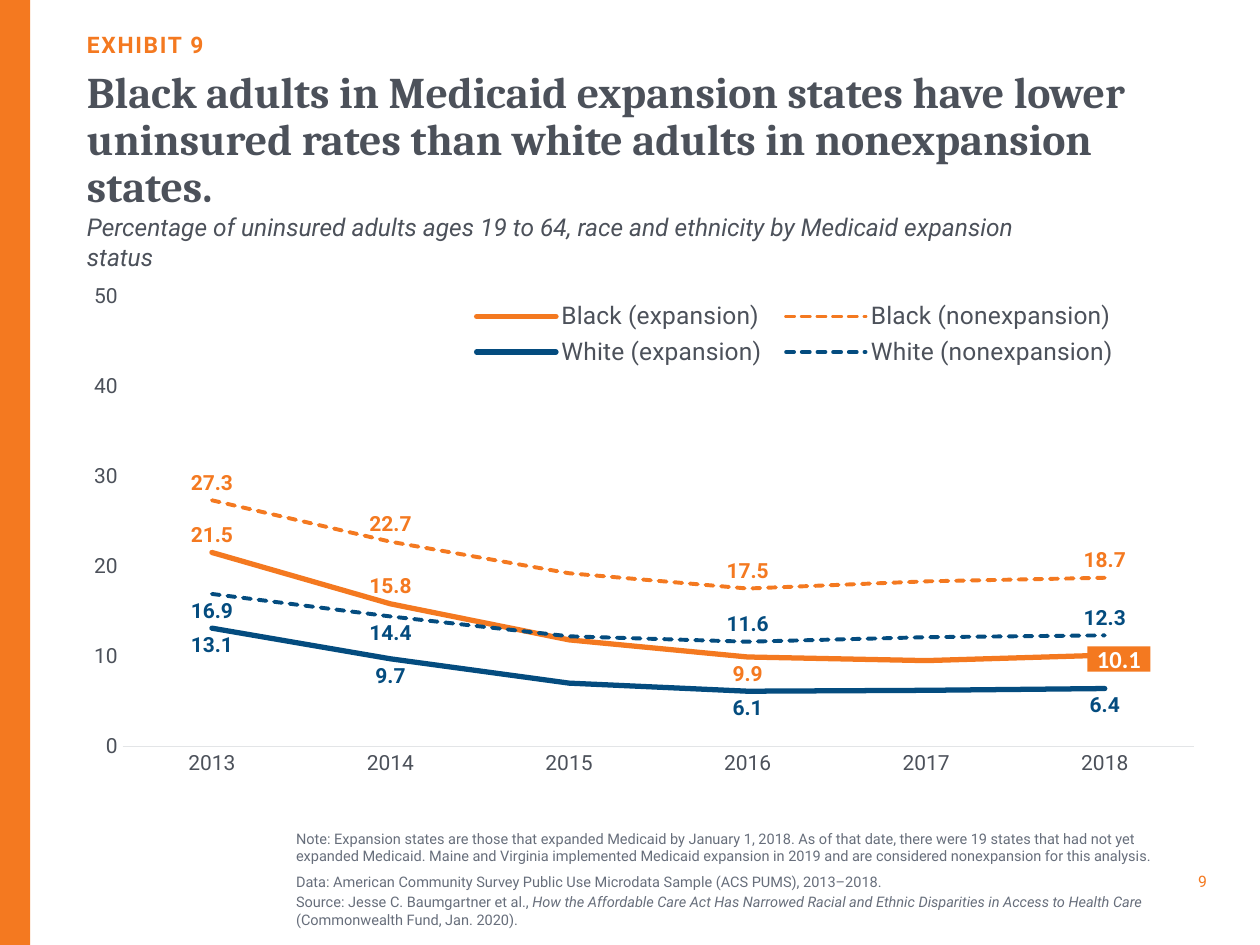
from lxml import etree
from pptx import Presentation
from pptx.chart.data import CategoryChartData
from pptx.dml.color import RGBColor
from pptx.enum.chart import XL_CHART_TYPE, XL_LABEL_POSITION, XL_LEGEND_POSITION, XL_TICK_MARK
from pptx.enum.dml import MSO_LINE
from pptx.enum.shapes import MSO_SHAPE
from pptx.enum.text import MSO_ANCHOR, PP_ALIGN
from pptx.oxml.ns import qn
from pptx.util import Pt

ORANGE = RGBColor(0xF4, 0x79, 0x20)
BLUE = RGBColor(0x04, 0x4C, 0x7F)
DARK = RGBColor(0x4C, 0x51, 0x5A)
GRAY = RGBColor(0x67, 0x6E, 0x7B)
PALE = RGBColor(0xE3, 0xE5, 0xE7)
WHITE = RGBColor(0xFF, 0xFF, 0xFF)
ABOVE, BELOW = XL_LABEL_POSITION.ABOVE, XL_LABEL_POSITION.BELOW
TOP, MIDDLE, BOTTOM = MSO_ANCHOR.TOP, MSO_ANCHOR.MIDDLE, MSO_ANCHOR.BOTTOM
LEFT = 49.7


def style(font, size, color, bold=False, italic=False, name="Roboto"):
    font.name, font.size = name, Pt(size)
    font.bold, font.italic = bold, italic
    font.color.rgb = color


def place(parent, index, **fractions):
    """Give a chart part a manual layout, in fractions of the chart."""
    for old in parent.findall(qn("c:layout")):
        parent.remove(old)
    layout = etree.Element(qn("c:layout"))
    manual = etree.SubElement(layout, qn("c:manualLayout"))
    if parent.tag == qn("c:plotArea"):
        etree.SubElement(manual, qn("c:layoutTarget")).set("val", "inner")
    for mode in ("xMode", "yMode"):
        etree.SubElement(manual, qn("c:" + mode)).set("val", "edge")
    for key, value in fractions.items():
        etree.SubElement(manual, qn("c:" + key)).set("val", str(value))
    parent.insert(index, layout)


deck = Presentation()
deck.slide_width, deck.slide_height = Pt(720), Pt(540)
page = deck.slides.add_slide(deck.slide_layouts[6])

stripe = page.shapes.add_shape(MSO_SHAPE.RECTANGLE, 0, 0, Pt(17.2), Pt(540))

# Text boxes: place, anchor, alignment, paragraphs of (text, size, colour, bold, italic, font)
note = (8.3, GRAY)
texts = [
    ((667.4, 495.4, 22.3, 15.8), MIDDLE, PP_ALIGN.RIGHT, [[("9", 9, ORANGE)]]),
    ((169.2, 471.6, 498.2, 61.2), MIDDLE, PP_ALIGN.LEFT, [
        [("Note: Expansion states are those that expanded Medicaid by January 1, 2018. "
          "As of that date, there were 19 states that had not yet expanded Medicaid. "
          "Maine and Virginia implemented Medicaid expansion in 2019 and are considered "
          "nonexpansion for this analysis.", *note)],
        [("Data: American Community Survey Public Use Microdata Sample (ACS PUMS), 2013–2018.",
          *note)],
        [("Source: Jesse C. Baumgartner et al., ", *note),
         ("How the Affordable Care Act Has Narrowed Racial and Ethnic Disparities in Access "
          "to Health Care ", *note, False, True),
         ("(Commonwealth Fund, Jan. 2020).", *note)]]),
    ((LEFT, 13.7, 637.2, 19.4), BOTTOM, PP_ALIGN.LEFT, [[("EXHIBIT 9", 13, ORANGE, True)]]),
    ((LEFT, 40.3, 637.2, 93.6), TOP, PP_ALIGN.LEFT, [
        [("Black adults in Medicaid expansion states have lower uninsured rates than "
          "white adults in nonexpansion states.", 25, DARK, True, False, "Cambria")]]),
    ((LEFT, 129.6, 541.4, 17.3), MIDDLE, PP_ALIGN.LEFT, [
        [("Percentage of uninsured adults ages 19 to 64, race and ethnicity by Medicaid "
          "expansion status", 14, DARK, False, True)]]),
]
boxes = []
for bounds, anchor, align, paragraphs in texts:
    box = page.shapes.add_textbox(*map(Pt, bounds))
    frame = box.text_frame
    frame.word_wrap, frame.vertical_anchor = True, anchor
    frame.margin_left = frame.margin_right = frame.margin_top = frame.margin_bottom = 0
    for index, spans in enumerate(paragraphs):
        para = frame.add_paragraph() if index else frame.paragraphs[0]
        para.alignment = align
        if index:
            para.space_before = Pt(1.7)
        for words, *look in spans:
            span = para.add_run()
            span.text = words
            style(span.font, *look)
    boxes.append(box)
number, notes, exhibit, title, subtitle = boxes
notes.text_frame.paragraphs[0].space_after = Pt(3)
title.text_frame.paragraphs[0].line_spacing = 0.9
exhibit.text_frame.paragraphs[0].runs[0].font._element.set("spc", "100")

# Series: name, values, colour, dashed, label position by point
lines = [
    ("Black (expansion)", (21.5, 15.8, 11.8, 9.9, 9.5, 10.1), ORANGE, False,
     {0: ABOVE, 1: ABOVE, 3: BELOW}),
    ("Black (nonexpansion)", (27.3, 22.7, 19.2, 17.5, 18.3, 18.7), ORANGE, True,
     dict.fromkeys((0, 1, 3, 5), ABOVE)),
    ("White (expansion)", (13.1, 9.7, 7, 6.1, 6.2, 6.4), BLUE, False,
     dict.fromkeys((0, 1, 3, 5), BELOW)),
    ("White (nonexpansion)", (16.9, 14.4, 12.2, 11.6, 12.1, 12.3), BLUE, True,
     {0: BELOW, 1: BELOW, 3: ABOVE, 5: ABOVE}),
]
data = CategoryChartData(number_format="0.0")
data.categories = [str(year) for year in range(2013, 2019)]
for name, values, *_ in lines:
    data.add_series(name, values)
chart = page.shapes.add_chart(XL_CHART_TYPE.LINE, Pt(LEFT), Pt(162), Pt(637.2), Pt(295.2),
                              data).chart
chart.has_title = False
style(chart.font, 10, DARK)
chart.plots[0].vary_by_categories = False
place(chart.plots[0]._element.getparent(), 0, x=0.032, y=0.015, w=0.961, h=0.88)

for series, (_, _, color, dashed, positions) in zip(chart.plots[0].series, lines):
    series.smooth = False
    line = series.format.line
    line.color.rgb = color
    line.width = Pt(2.25 if dashed else 3)
    if dashed:
        line.dash_style = MSO_LINE.SQUARE_DOT
    series._element.find(".//" + qn("a:ln")).set("cap", "rnd")
    labels = series.data_labels
    labels.show_value = False
    labels.number_format, labels.number_format_is_linked = "0.0", False
    style(labels.font, 12, color, True)
    for index, position in positions.items():
        label = series.points[index].data_label
        style(label.font, 12, color, True)
        label.position = position

years, rates = chart.category_axis, chart.value_axis
for axis in (years, rates):
    axis.major_tick_mark = axis.minor_tick_mark = XL_TICK_MARK.NONE
    axis.has_major_gridlines = False
    style(axis.tick_labels.font, 12, DARK)
years.format.line.color.rgb = PALE
years.format.line.width = Pt(0.75)
rates.format.line.fill.background()
rates.minimum_scale, rates.maximum_scale, rates.major_unit = 0, 50, 10
rates.tick_labels.number_format, rates.tick_labels.number_format_is_linked = "0", False

chart.has_legend = True
legend = chart.legend
legend.position = XL_LEGEND_POSITION.BOTTOM
legend.include_in_layout = False
style(legend.font, 14, DARK)
place(legend._element, 1, x=0.335, y=0.015, w=0.6, h=0.15)

callout = page.shapes.add_shape(MSO_SHAPE.RECTANGLE, Pt(621.4), Pt(369.4), Pt(36), Pt(14.4))
for shape in (stripe, callout):
    shape.shadow.inherit = False
    shape.fill.solid()
    shape.fill.fore_color.rgb = ORANGE
    shape.line.fill.background()
frame = callout.text_frame
frame.margin_left = frame.margin_right = frame.margin_top = frame.margin_bottom = 0
frame.vertical_anchor = MIDDLE
frame.paragraphs[0].alignment = PP_ALIGN.CENTER
span = frame.paragraphs[0].add_run()
span.text = "10.1"
style(span.font, 14, WHITE, True, name="Calibri")

deck.save("out.pptx")
